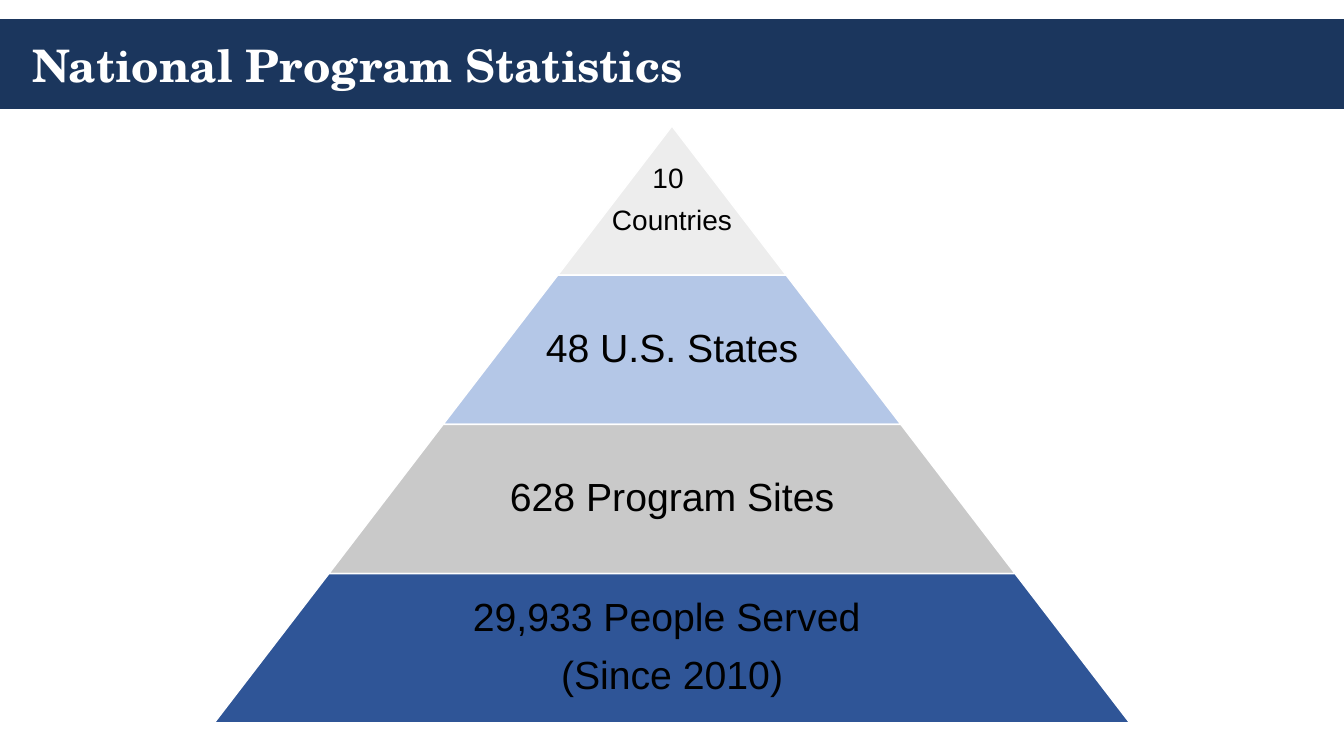
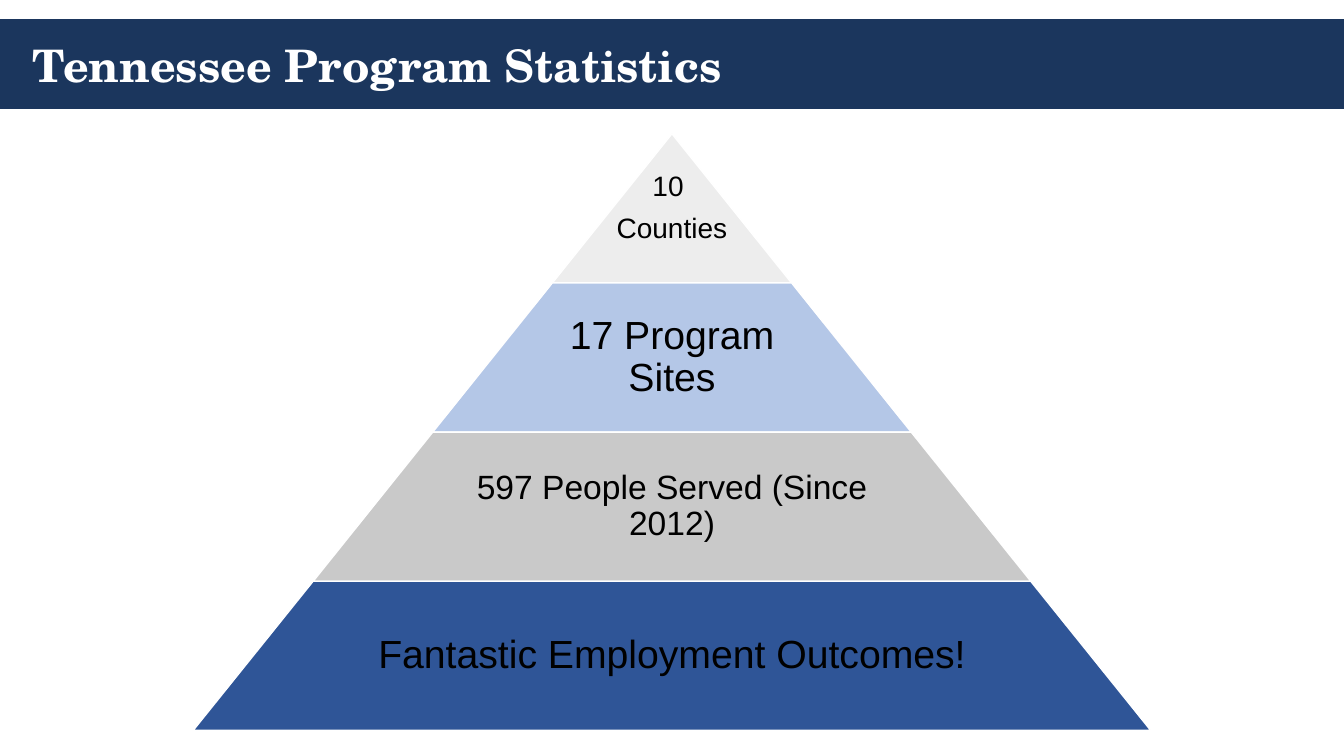
from dataclasses import dataclass

from pptx import Presentation
from pptx.dml.color import RGBColor
from pptx.enum.shapes import MSO_SHAPE, PP_PLACEHOLDER
from pptx.enum.text import MSO_ANCHOR, MSO_AUTO_SIZE, PP_ALIGN
from pptx.util import Pt

PX = 3048
SLIDE_WIDTH, SLIDE_HEIGHT = 4000, 2250
TIER_HEIGHT = 444
RECTANGLE = MSO_SHAPE.RECTANGLE
TITLE = PP_PLACEHOLDER.TITLE
MIDDLE = MSO_ANCHOR.MIDDLE
NO_AUTOFIT = MSO_AUTO_SIZE.NONE
LEFT, CENTER = PP_ALIGN.LEFT, PP_ALIGN.CENTER


@dataclass(frozen=True)
class Theme:
    band: str = "1B365D"
    light: str = "FFFFFF"
    dark: str = "000000"
    tiers: tuple = ("EDEDED", "B4C7E7", "C9C9C9", "2F5597")
    title_font: str = "TeX Gyre Schola"
    body_font: str = "Arial"
    title_size: int = 32
    small: int = 20
    medium: int = 24
    large: int = 28
    line_width: int = 1
    line_spacing: float = 0.9
    gap_ratio: float = 0.4
    tier_insets: tuple = ((12, 12), (270, 12), (393, 15), (519, 15))


THEME = Theme()


class Deck:
    """Holds the presentation, its theme and the current slide."""

    def __init__(self, theme):
        self.theme = theme
        self.prs = Presentation()
        self.prs.slide_width = SLIDE_WIDTH * PX
        self.prs.slide_height = SLIDE_HEIGHT * PX
        self.layout = self.prs.slide_layouts[5]
        for placeholder in list(self.layout.placeholders):
            if placeholder.placeholder_format.type != TITLE:
                self.layout.shapes.element.remove(placeholder.element)
        self.slide = None

    def start_slide(self, title):
        first = self.slide is None
        self.slide = self.prs.slides.add_slide(self.layout)
        if first:
            self.move_band_to_layout()
        self.title(title)

    def paint(self, shape, fill):
        shape.shadow.inherit = False
        shape.fill.solid()
        shape.fill.fore_color.rgb = RGBColor.from_string(fill)

    def style_font(self, font, name, size, color, bold=False):
        font.name, font.size, font.bold = name, Pt(size), bold
        font.color.rgb = RGBColor.from_string(color)

    def move_band_to_layout(self):
        band = self.slide.shapes.add_shape(
            RECTANGLE, 0, 57 * PX, SLIDE_WIDTH * PX, 267 * PX)
        self.paint(band, self.theme.band)
        band.line.fill.background()
        self.layout.shapes.element.insert(2, band.element)

    def title(self, text):
        heading = self.slide.shapes.title
        heading.left, heading.top = 66 * PX, 57 * PX
        heading.width, heading.height = 3867 * PX, 270 * PX
        frame = heading.text_frame
        frame.text = text
        frame.auto_size = NO_AUTOFIT
        frame.vertical_anchor = MIDDLE
        paragraph = frame.paragraphs[0]
        paragraph.alignment = LEFT
        self.style_font(paragraph.runs[0].font, self.theme.title_font,
                        self.theme.title_size, self.theme.light, bold=True)

    def pyramid(self, top, half_base, tiers):
        center = SLIDE_WIDTH // 2
        for level, (text, size) in enumerate(tiers):
            upper = half_base * level // len(tiers)
            lower = half_base * (level + 1) // len(tiers)
            tier_top = top + level * TIER_HEIGHT
            tier_bottom = tier_top + TIER_HEIGHT
            outline = self.slide.shapes.build_freeform(
                center - lower, tier_bottom, scale=PX)
            outline.add_line_segments([
                (center - upper, tier_top),
                (center + upper, tier_top),
                (center + lower, tier_bottom)], close=True)
            tier = outline.convert_to_shape()
            self.paint(tier, self.theme.tiers[level])
            tier.line.color.rgb = RGBColor.from_string(self.theme.light)
            tier.line.width = Pt(self.theme.line_width)
            self.tier_label(tier.text_frame, text, size,
                            self.theme.tier_insets[level])

    def tier_label(self, frame, text, size, insets):
        frame.text = text
        frame.word_wrap = True
        frame.vertical_anchor = MIDDLE
        frame.margin_left = frame.margin_right = insets[0] * PX
        frame.margin_top = frame.margin_bottom = insets[1] * PX
        for paragraph in frame.paragraphs:
            paragraph.alignment = CENTER
            paragraph.line_spacing = self.theme.line_spacing
            paragraph.space_after = Pt(size * self.theme.gap_ratio)
            for run in paragraph.runs:
                self.style_font(run.font, self.theme.body_font, size,
                                self.theme.dark)


def main():
    deck = Deck(THEME)

    deck.start_slide("National Program Statistics")
    deck.pyramid(375, 1362, [
        ("10 \nCountries", THEME.small),
        ("48 U.S. States", THEME.large),
        ("628 Program Sites", THEME.large),
        ("29,933 People Served \n(Since 2010)", THEME.large),
    ])

    deck.start_slide("Tennessee Program Statistics")
    deck.pyramid(398, 1425, [
        ("10 \nCounties", THEME.small),
        ("17 Program Sites", THEME.large),
        ("597 People Served (Since 2012)", THEME.medium),
        ("Fantastic Employment Outcomes!", THEME.large),
    ])

    deck.prs.save("out.pptx")


if __name__ == "__main__":
    main()
